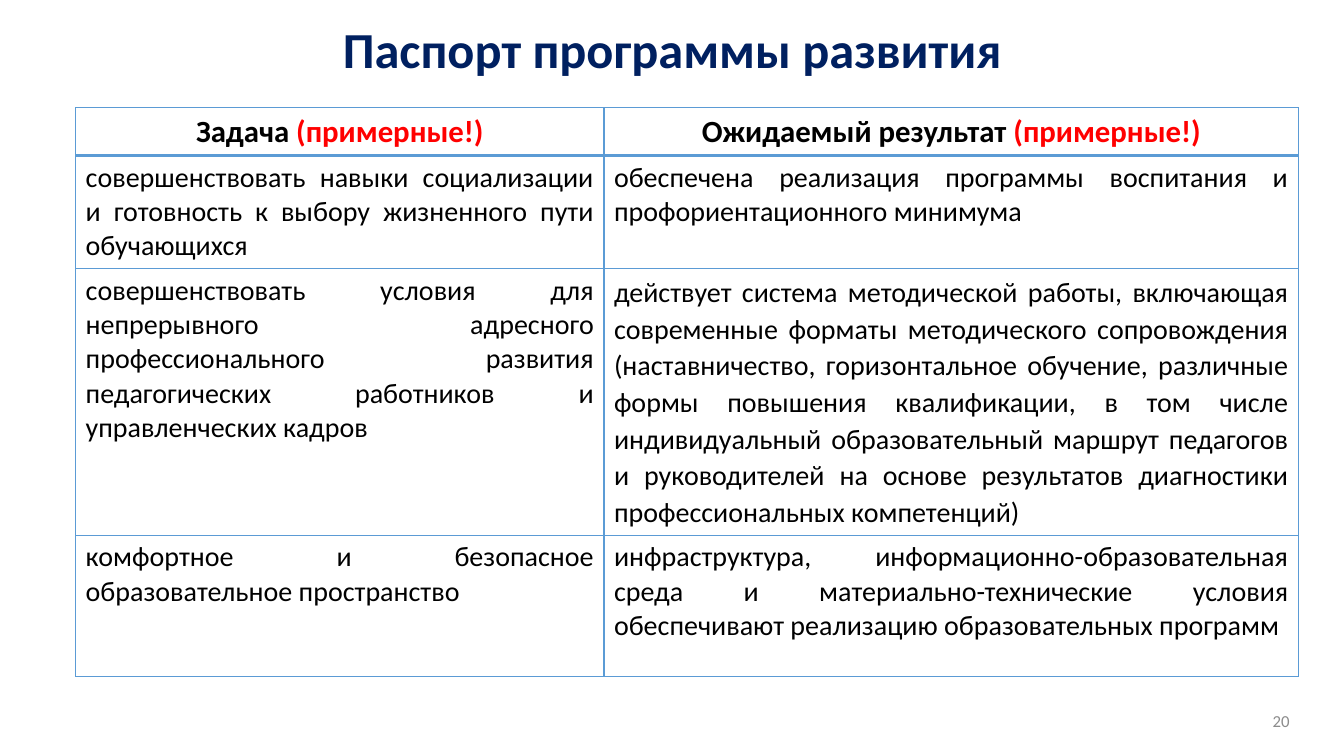
"""Build the development programme passport slide with its table of tasks and results."""
from lxml.etree import SubElement
from pptx import Presentation
from pptx.dml.color import RGBColor
from pptx.enum.text import MSO_ANCHOR, MSO_AUTO_SIZE, PP_ALIGN
from pptx.oxml.ns import qn
from pptx.util import Inches, Pt

TITLE = "Паспорт программы развития"
PAGE_NUMBER = "20"
HEADERS = ["Задача ", "Ожидаемый результат "]
HEADER_NOTE = "(примерные!)"
ROWS = [
    ("совершенствовать навыки социализации и готовность к выбору жизненного пути обучающихся",
     "обеспечена реализация программы воспитания и профориентационного минимума"),
    ("совершенствовать условия для непрерывного адресного профессионального развития "
     "педагогических работников и управленческих кадров",
     "действует система методической работы, включающая современные форматы методического "
     "сопровождения (наставничество, горизонтальное обучение, различные формы повышения "
     "квалификации, в том числе индивидуальный образовательный маршрут педагогов и "
     "руководителей на основе результатов диагностики профессиональных компетенций)"),
    ("комфортное и безопасное образовательное пространство",
     "инфраструктура, информационно-образовательная среда и материально-технические условия "
     "обеспечивают реализацию образовательных программ"),
]
COLUMN_WIDTHS = [5.24, 6.89]
ROW_HEIGHTS = [0.47, 1.04, 2.52, 1.4]
LINE_SPACINGS = {(2, 1): 1.07}
FONT = "Calibri"
NAVY, BLACK, RED, GRAY, WHITE, BLUE = "002060", "000000", "FF0000", "8C8C8C", "FFFFFF", "5B9BD5"


def color(value):
    return RGBColor.from_string(value)


def format_paragraph(para, size, ink, align, bold=False):
    para.alignment = align
    para.font.name = FONT
    para.font.size = Pt(size)
    para.font.bold = bold
    para.font.color.rgb = color(ink)


def format_cell(cell, top, bottom):
    properties = cell._tc.get_or_add_tcPr()
    for side, width in (("L", 1), ("R", 1), ("T", top), ("B", bottom)):
        line = SubElement(properties, qn(f"a:ln{side}"), w=str(Pt(width)))
        fill = SubElement(line, qn("a:solidFill"))
        SubElement(fill, qn("a:srgbClr"), val=BLUE)
    cell.fill.solid()
    cell.fill.fore_color.rgb = color(WHITE)


def add_title(page):
    title = page.shapes.title
    title.left, title.top = Inches(0.92), Inches(0.21)
    title.width, title.height = Inches(11.5), Inches(0.62)
    frame = title.text_frame
    frame.text = TITLE
    frame.auto_size = MSO_AUTO_SIZE.NONE
    frame.vertical_anchor = MSO_ANCHOR.MIDDLE
    para = frame.paragraphs[0]
    para.line_spacing = 0.9
    format_paragraph(para, 36, NAVY, PP_ALIGN.CENTER, bold=True)


def add_passport_table(page):
    frame = page.shapes.add_table(
        len(ROW_HEIGHTS), len(COLUMN_WIDTHS), Inches(0.75), Inches(1.07),
        Inches(sum(COLUMN_WIDTHS)), Inches(sum(ROW_HEIGHTS)))
    table = frame.table
    table.horz_banding = False
    for column, width in zip(table.columns, COLUMN_WIDTHS):
        column.width = Inches(width)
    for row, height in zip(table.rows, ROW_HEIGHTS):
        row.height = Inches(height)
    for row_index, texts in enumerate([HEADERS, *ROWS]):
        for column_index, text in enumerate(texts):
            cell = table.cell(row_index, column_index)
            format_cell(cell, top=2 if row_index == 1 else 1, bottom=2 if row_index == 0 else 1)
            para = cell.text_frame.paragraphs[0]
            para.add_run().text = text
            if row_index == 0:
                format_paragraph(para, 22, BLACK, PP_ALIGN.CENTER, bold=True)
                span = para.add_run()
                span.text = HEADER_NOTE
                span.font.color.rgb = color(RED)
            else:
                format_paragraph(para, 20, BLACK, PP_ALIGN.JUSTIFY)
                para.line_spacing = LINE_SPACINGS.get((row_index, column_index))


def add_page_number(page):
    box = page.shapes.add_textbox(Inches(10.92), Inches(6.95), Inches(1.97), Inches(0.4))
    frame = box.text_frame
    frame.word_wrap = True
    frame.vertical_anchor = MSO_ANCHOR.MIDDLE
    frame.text = PAGE_NUMBER
    format_paragraph(frame.paragraphs[0], 12, GRAY, PP_ALIGN.RIGHT)


def main():
    deck = Presentation()
    deck.slide_width, deck.slide_height = Inches(13.33), Inches(7.5)
    page = deck.slides.add_slide(deck.slide_layouts[5])
    add_title(page)
    add_passport_table(page)
    add_page_number(page)
    deck.save("out.pptx")


if __name__ == "__main__":
    main()
